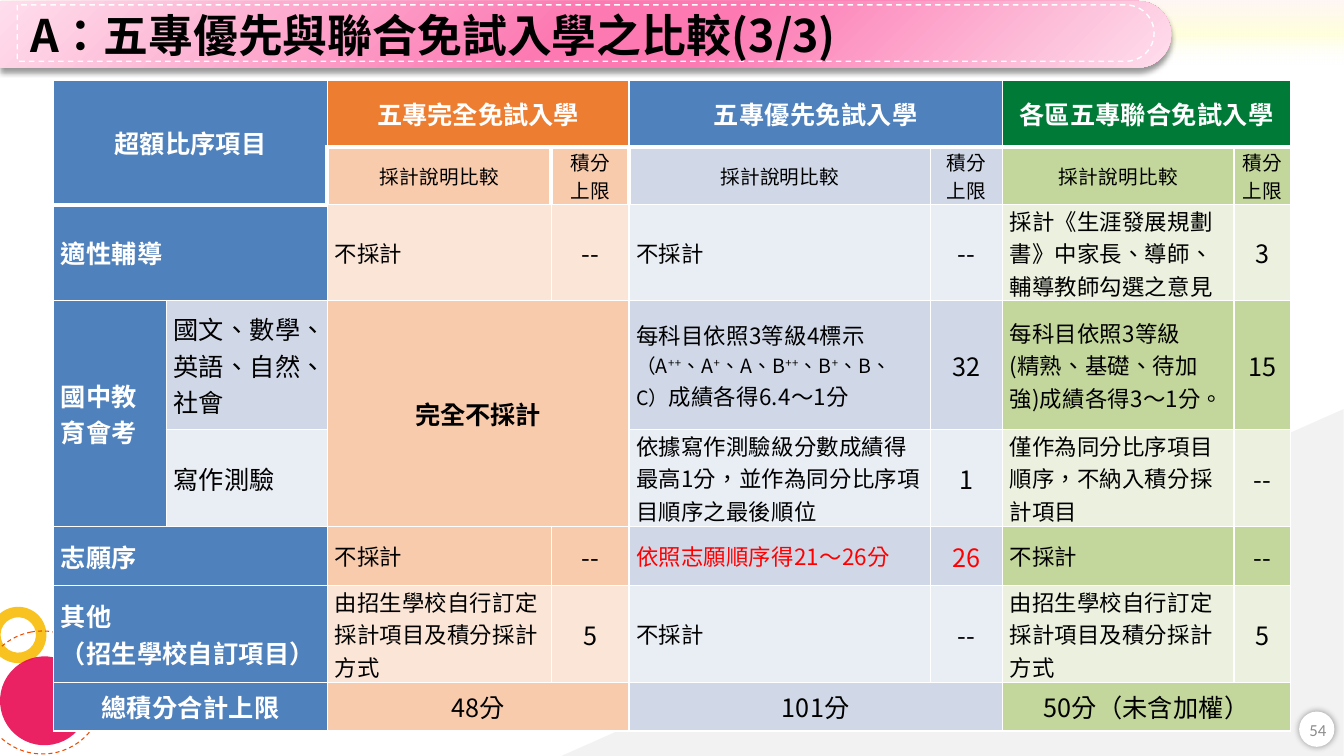
"""Build a slide comparing three junior-college admission routes in one table."""
from lxml import etree
from pptx import Presentation
from pptx.dml.color import RGBColor
from pptx.enum.dml import MSO_LINE
from pptx.enum.shapes import MSO_SHAPE
from pptx.enum.text import MSO_ANCHOR, PP_ALIGN
from pptx.oxml.ns import qn
from pptx.util import Cm, Pt

LEFT, CENTER = PP_ALIGN.LEFT, PP_ALIGN.CENTER
MIDDLE, BOTTOM = MSO_ANCHOR.MIDDLE, MSO_ANCHOR.BOTTOM
OVAL, DONUT = MSO_SHAPE.OVAL, MSO_SHAPE.DONUT
TAB = MSO_SHAPE.ROUND_2_SAME_RECTANGLE
CJK, LANGUAGE = "Noto Sans CJK SC", "zh-TW"
WHITE, BLACK, RED, BLUE = "FFFFFF", "000000", "FF0000", "4F81BD"

TITLE = "A：五專優先與聯合免試入學之比較(3/3)"
PAGE_NUMBER = "54"
NOTE, LIMIT = "採計說明比較", "積分\n上限"
SCHOOL = "由招生學校自行訂定採計項目及積分採計方式"
ROWS = [
    ["超額比序項目", None, "五專完全免試入學", None, "五專優先免試入學", None, "各區五專聯合免試入學", None],
    [None, None, NOTE, LIMIT, NOTE, LIMIT, NOTE, LIMIT],
    ["適性輔導", None, "不採計", "--", "不採計", "--",
     "採計《生涯發展規劃書》中家長、導師、輔導教師勾選之意見", "3"],
    ["國中教育會考", "國文、數學、英語、自然、社會", "完全不採計", None, "每科目依照3等級4標示\v", "32",
     "每科目依照3等級\v(精熟、基礎、待加強)成績各得3～1分。", "15"],
    [None, "寫作測驗", None, None, "依據寫作測驗級分數成績得最高1分，並作為同分比序項目順序之最後順位", "1",
     "僅作為同分比序項目順序，不納入積分採計項目", "--"],
    ["志願序", None, "不採計", "--", "依照志願順序得21～26分", "26", "不採計", "--"],
    ["其他\n（招生學校自訂項目）", None, SCHOOL, "5", "不採計", "--", SCHOOL, "5"],
    ["總積分合計上限", None, "48分", None, "101分", None, "50分（未含加權）", None],
]
GRADES = [("（A", 14, 0), ("++", 14, 30), ("、A", 14, 0), ("+", 14, 30), ("、A、B", 14, 0), ("++", 14, 30),
          ("、B", 14, 0), ("+", 14, 30), ("、B、C）", 14, 0), ("成績各得6.4～1分", 16, 0)]
GRADES_CELL = (3, 4)
SPANS = {(0, 0): (2, 2), (3, 0): (2, 1), (3, 2): (2, 2)}
SPANS.update({(row, 0): (1, 2) for row in (2, 5, 6, 7)})
SPANS.update({(row, column): (1, 2) for row in (0, 7) for column in (2, 4, 6)})
RED_CELLS = {(5, 4), (5, 5)}
UNSPACED_CELLS = {(0, 2), (3, 2), (7, 2)}
COLUMN_WIDTHS = [2.84, 4.06, 5.64, 1.96, 7.61, 1.8, 5.84, 1.42]
ROW_HEIGHTS = [1.68, 1.45, 2.41, 3.26, 2.43, 1.5, 2.44, 1.22]
HEADER_FILLS = [BLUE, "ED7D31", BLUE, "007A37"]
BAND_FILLS = [("E9EDF4", "D0D8E8"), ("FBE5D6", "F8CBAD"), ("E9EDF4", "D0D8E8"), ("EBF1DE", "C3D69B")]

BAND_STOPS = [(0, "FFF3F3", 70), (53, "FFFFCC", 70), (100, "FFFFFF", 0)]
BANNER_STOPS = [(0, "FEDEEC", 100), (48, "FC79B2", 100), (60, "FC79B2", 100), (100, "FEDEEC", 100)]


def rgb(value):
    return RGBColor.from_string(value)


def add_element(parent, tag, **attributes):
    return etree.SubElement(parent, qn(tag), {key: str(value) for key, value in attributes.items()})


def add_color(parent, color, opacity=100):
    element = add_element(parent, "a:srgbClr", val=color)
    if opacity < 100:
        add_element(element, "a:alpha", val=opacity * 1000)


def add_figure(slide, preset, box, fill=None, opacity=100, dash=None, rotation=0, flip=False, adjustments=()):
    shape = slide.shapes.add_shape(preset, *map(Cm, box))
    shape.shadow.inherit = False
    shape.rotation = rotation
    for index, value in enumerate(adjustments):
        shape.adjustments[index] = value
    if flip:
        shape._element.spPr.find(qn("a:xfrm")).set("flipH", "1")
    if fill:
        shape.fill.solid()
        shape.fill.fore_color.rgb = rgb(fill)
        color = shape._element.spPr.find(qn("a:solidFill"))[0]
        add_element(color, "a:alpha", val=opacity * 1000)
    else:
        shape.fill.background()
    if dash:
        color, width = dash
        shape.line.color.rgb = rgb(color)
        shape.line.width = Pt(width)
        shape.line.dash_style = MSO_LINE.DASH
    else:
        shape.line.fill.background()
    return shape


def set_gradient(shape, stops, angle):
    properties = shape._element.spPr
    gradient = etree.Element(qn("a:gradFill"), rotWithShape="1")
    stop_list = add_element(gradient, "a:gsLst")
    for position, color, opacity in stops:
        add_color(add_element(stop_list, "a:gs", pos=position * 1000), color, opacity)
    add_element(gradient, "a:lin", ang=angle * 60000, scaled=0)
    properties.replace(properties.find(qn("a:noFill")), gradient)


def set_shadow(shape, blur, distance, angle):
    effects = shape._element.spPr.find(qn("a:effectLst"))
    shadow = add_element(effects, "a:outerShdw", blurRad=Pt(blur), dist=Pt(distance),
                         dir=angle * 60000, algn="ctr", rotWithShape=0)
    add_color(shadow, BLACK, 40)


def style_run(run, size, color, bold=False, name=CJK, spacing=0):
    font = run.font
    font.size, font.bold, font.name = Pt(size), bold, name
    font.color.rgb = rgb(color)
    properties = run._r.get_or_add_rPr()
    properties.set("lang", LANGUAGE)
    properties.set("spc", str(spacing))
    add_element(properties, "a:ea", typeface=name)


def add_label(slide, box, text, size, color, anchor, alignment, left=0.25, bold=False, name=CJK):
    frame = slide.shapes.add_textbox(*map(Cm, box)).text_frame
    frame.word_wrap = True
    frame.vertical_anchor = anchor
    frame.margin_left = Cm(left)
    frame.margin_right = frame.margin_top = frame.margin_bottom = Cm(0.25)
    frame.text = text
    frame.paragraphs[0].alignment = alignment
    style_run(frame.paragraphs[0].runs[0], size, color, bold, name)


def set_borders(cell, row, column, last_row):
    heavy = {
        "a:lnL": row == 1 and column in (2, 3, 4),
        "a:lnR": row == 1 and column in (2, 3),
        "a:lnT": row == 1 or (row == 2 and column == 0),
        "a:lnB": last_row == (1 if column < 2 else 0),
    }
    for tag, is_heavy in heavy.items():
        line = add_element(cell._tc.get_or_add_tcPr(), tag, w=Pt(3 if is_heavy else 1))
        add_color(add_element(line, "a:solidFill"), WHITE)


def cell_style(row, column):
    """Return fill, size, colour, bold and alignment for a cell."""
    group = column // 2
    fill = BAND_FILLS[group][row % 2]
    if row == 0:
        return HEADER_FILLS[group], 18, WHITE, True, CENTER
    if column == 0:
        return BLUE, 18, WHITE, True, CENTER if row == 7 else LEFT
    if row == 1:
        return fill, 14, BLACK, False, CENTER
    merged = (row, column) in SPANS
    centered = merged or (column > 1 and column % 2 == 1)
    size = 18 if centered or column == 1 else 16
    color = RED if (row, column) in RED_CELLS else BLACK
    return fill, size, color, merged and row == 3, CENTER if centered else LEFT


def fill_cell(cell, row, column, text):
    fill, size, color, bold, alignment = cell_style(row, column)
    spacing = 0 if (row, column) in UNSPACED_CELLS else 20
    set_borders(cell, row, column, row + SPANS.get((row, column), (1, 1))[0] - 1)
    cell.fill.solid()
    cell.fill.fore_color.rgb = rgb(fill)
    cell.vertical_anchor = MIDDLE
    cell.margin_left = cell.margin_right = Cm(0.1 if row < 2 else 0.18)
    cell.margin_top = cell.margin_bottom = 0
    cell.text_frame.text = text
    for paragraph in cell.text_frame.paragraphs:
        paragraph.alignment = alignment
        for line_break in paragraph._p.findall(qn("a:br")):
            add_element(line_break, "a:rPr", sz=size * 100)
        for run in paragraph.runs:
            style_run(run, size, color, bold, spacing=spacing)
    if (row, column) == GRADES_CELL:
        for piece, piece_size, raised in GRADES:
            run = paragraph.add_run()
            run.text = piece
            style_run(run, piece_size, color, spacing=spacing)
            run._r.rPr.set("baseline", str(raised * 1000))


def add_comparison(slide):
    table = slide.shapes.add_table(len(ROWS), len(COLUMN_WIDTHS), Cm(1.35), Cm(2.03),
                                   Cm(sum(COLUMN_WIDTHS)), Cm(sum(ROW_HEIGHTS))).table
    table.first_row = table.horz_banding = False
    for column, width in zip(table.columns, COLUMN_WIDTHS):
        column.width = Cm(width)
    for row, height in zip(table.rows, ROW_HEIGHTS):
        row.height = Cm(height)
    for (row, column), (down, across) in SPANS.items():
        table.cell(row, column).merge(table.cell(row + down - 1, column + across - 1))
    for row, texts in enumerate(ROWS):
        for column, text in enumerate(texts):
            if text is not None:
                fill_cell(table.cell(row, column), row, column, text)


def main():
    presentation = Presentation()
    presentation.slide_width, presentation.slide_height = Cm(33.87), Cm(19.05)
    slide = presentation.slides.add_slide(presentation.slide_layouts[6])
    add_figure(slide, DONUT, (-0.25, 15.29, 1.42, 1.42), "F8BB00", 87, rotation=79, adjustments=[0.186])
    add_figure(slide, OVAL, (-0.48, 15.9, 3.1, 3.1), dash=("ED4A00", 0.75), rotation=79)
    add_figure(slide, OVAL, (2.26, 16.66, 0.91, 0.91), "ED4A00", 87, rotation=79)
    add_figure(slide, OVAL, (0, 16.54, 2.24, 2.24), "E8004C", 87, rotation=79)
    top_band = add_figure(slide, MSO_SHAPE.RECTANGLE, (0.03, 0, 33.84, 1.63))
    set_gradient(top_band, BAND_STOPS, 90)
    add_figure(slide, MSO_SHAPE.RIGHT_TRIANGLE, (14.15, 10.31, 19.71, 8.74), "F2F2F2", flip=True)
    page_disc = add_figure(slide, OVAL, (32.74, 17.93, 0.89, 0.89), WHITE)
    set_shadow(page_disc, 5, 0, 0)
    add_label(slide, (32.54, 17.88, 1.35, 1.02), PAGE_NUMBER, 12, "8C8C8C", MIDDLE, CENTER, name="Calibri")
    banner = add_figure(slide, TAB, (13.92, -13.89, 1.68, 29.51), rotation=270, flip=True, adjustments=[0, 0.5])
    set_gradient(banner, BANNER_STOPS, 45)
    set_shadow(banner, 4, 3, 90)
    add_figure(slide, TAB, (14.05, -13.49, 1.42, 28.65), dash=(WHITE, 1), rotation=270, flip=True,
               adjustments=[0, 0.5])
    add_label(slide, (0, -0.13, 29.11, 1.93), TITLE, 32, BLACK, BOTTOM, LEFT, left=0.76, bold=True)
    add_comparison(slide)
    presentation.save("out.pptx")


if __name__ == "__main__":
    main()
